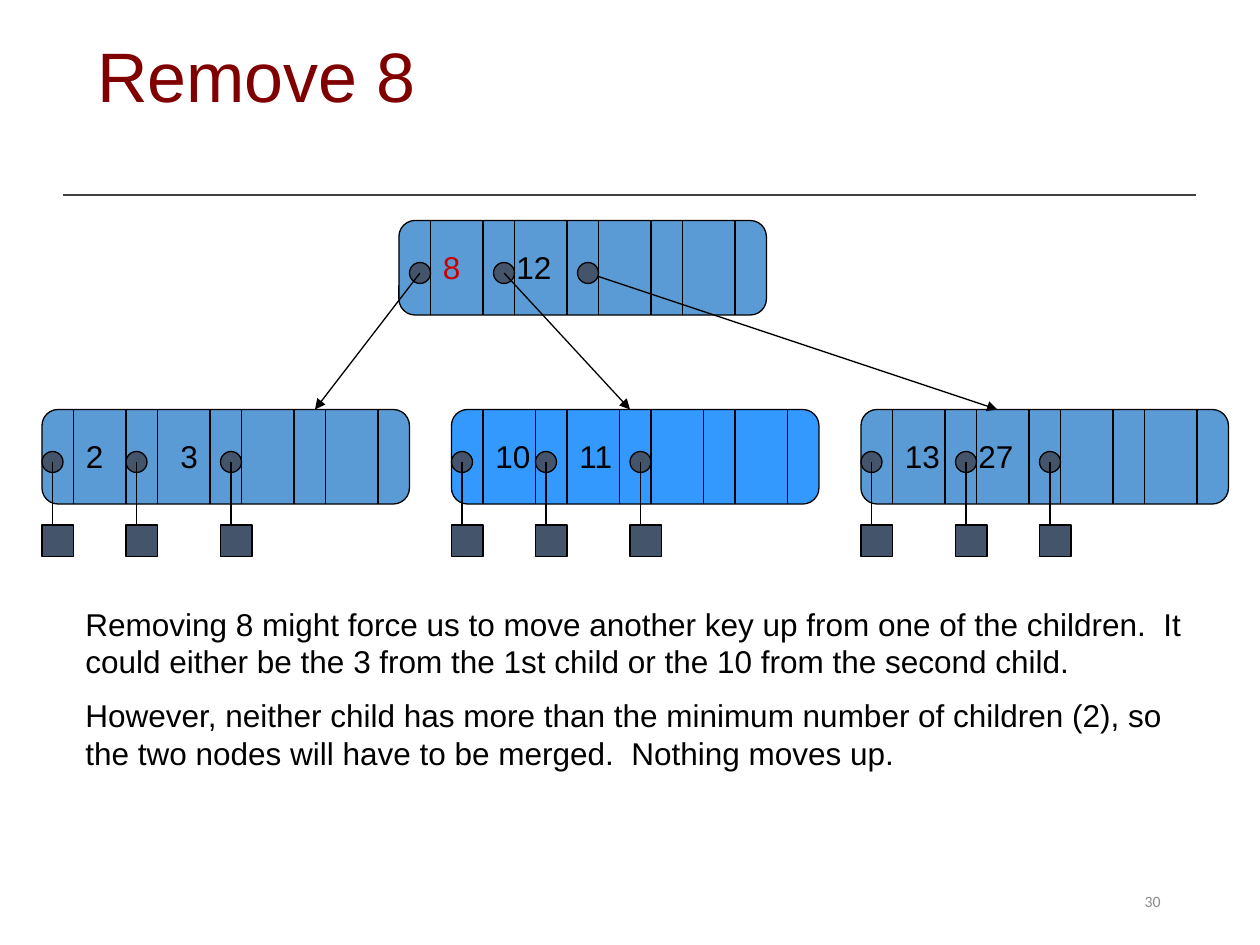
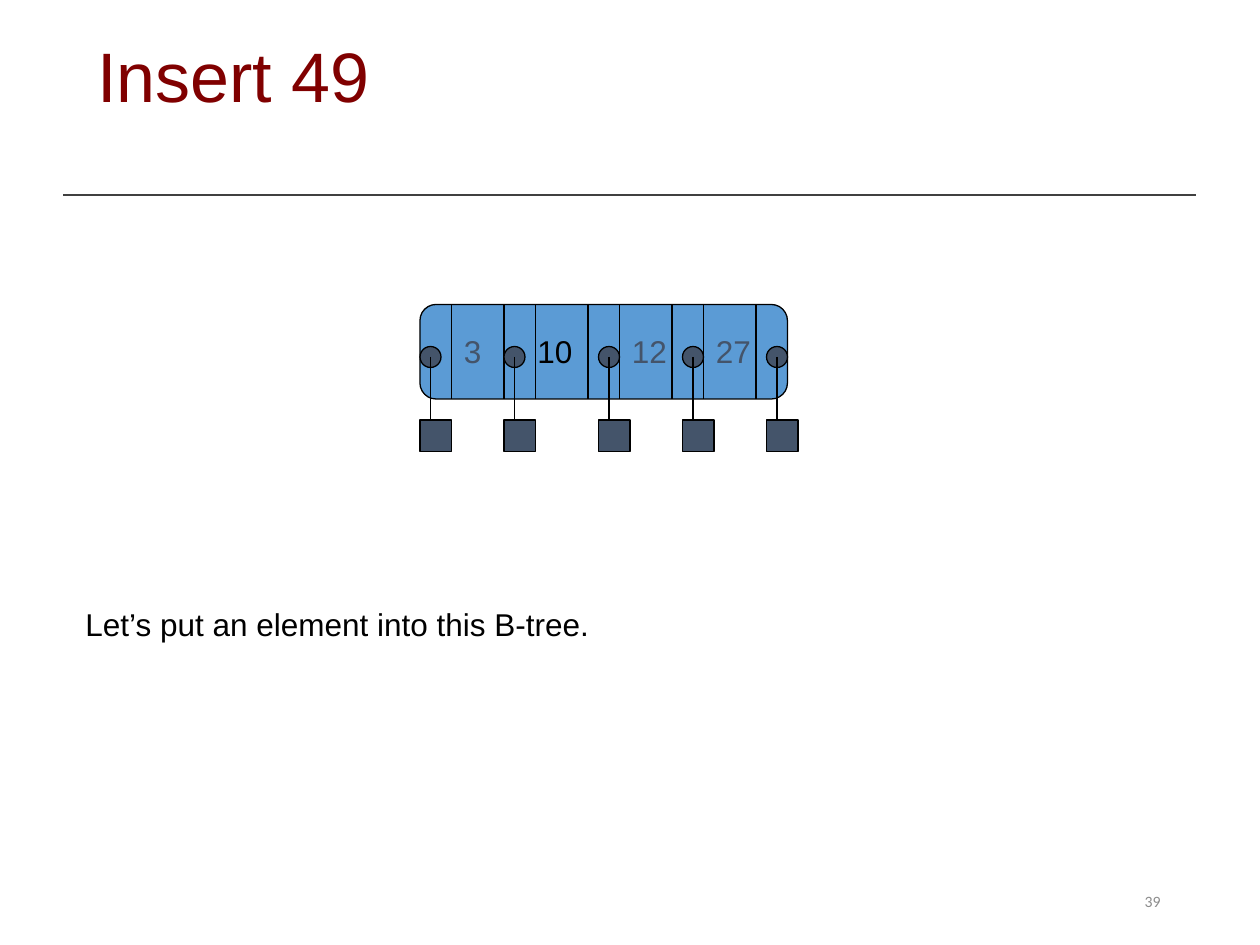
from lxml import etree
from pptx import Presentation
from pptx import util as u
from pptx.dml.color import RGBColor
from pptx.enum import shapes, text
from pptx.oxml.ns import qn

COLORS = {
    "title": "800000", "rule": "404040", "number": "8C8C8C", "ink": "000000",
    "node": "5B9BD5", "active": "3399FF", "pointer": "44546A", "removed": "CC0000",
}
# The trees lie on a grid of twelfths of an inch.
CELLS = 12
NODE_W, NODE_H = 35, 9
POINTER_W, KEY_W = 3, 5
DOT, LEAF = 2, 3
DOT_TOP, LEAF_TOP, LABEL_TOP = 4, 11, 2


def grid(n):
    return u.Inches(n / CELLS)


def rgb(name):
    return RGBColor.from_string(COLORS[name])


def style_paragraph(p, size, color, font="Arial"):
    for r in p.runs:
        r.font.name = font
        r.font.size = u.Pt(size)
        r.font.color.rgb = rgb(color)


def add_text(s, box, paragraphs, size, color, font="Arial", wrap=True):
    sp = s.shapes.add_textbox(*box)
    tf = sp.text_frame
    tf.word_wrap = wrap
    tf.text = "\n".join(paragraphs)
    for p in tf.paragraphs:
        style_paragraph(p, size, color, font)
    return tf


def add_line(s, start, end, color="ink", width=0.75, arrow=False):
    line = s.shapes.add_connector(shapes.MSO_CONNECTOR.STRAIGHT, *start, *end)
    line.line.color.rgb = rgb(color)
    line.line.width = u.Pt(width)
    if arrow:
        etree.SubElement(line.line._get_or_add_ln(), qn("a:tailEnd"), type="triangle")
    etree.SubElement(line._element.spPr, qn("a:effectLst"))


def grid_line(s, x1, y1, x2, y2, arrow=False):
    add_line(s, (grid(x1), grid(y1)), (grid(x2), grid(y2)), arrow=arrow)


def grid_shape(s, kind, x, y, w, h, fill):
    sp = s.shapes.add_shape(kind, grid(x), grid(y), grid(w), grid(h))
    sp.shadow.inherit = False
    sp.fill.solid()
    sp.fill.fore_color.rgb = rgb(fill)
    sp.line.color.rgb = rgb("ink")
    sp.line.width = u.Pt(0.75)
    return sp


def add_node(s, x, y, keys, fill="node"):
    """Draw a B-tree node; keys holds (value, offset, color)."""
    body = grid_shape(s, shapes.MSO_SHAPE.ROUNDED_RECTANGLE, x, y, NODE_W, NODE_H, fill)
    body.adjustments[0] = 0.17
    for slot in range(4):
        left = x + slot * (POINTER_W + KEY_W) + POINTER_W
        for divider in (left, left + KEY_W):
            grid_line(s, divider, y, divider, y + NODE_H)
    for value, offset, color in keys:
        width = 0.36 if len(value) == 1 else 0.51
        box = grid(x + offset), grid(y + LABEL_TOP), u.Inches(width), u.Inches(0.43)
        tf = add_text(s, box, [value], 18, color, wrap=False)
        tf.auto_size = text.MSO_AUTO_SIZE.SHAPE_TO_FIT_TEXT


def add_dot(s, x, y):
    grid_shape(s, shapes.MSO_SHAPE.OVAL, x, y + DOT_TOP, DOT, DOT, "pointer")


def add_leaves(s, x, y, offsets):
    """Hang an empty leaf from each pointer of the node at x, y."""
    for offset in offsets:
        left, middle = x + offset, x + offset + DOT / 2
        add_dot(s, left, y)
        grid_line(s, middle, y + DOT_TOP + DOT / 2, middle, y + LEAF_TOP + 2, arrow=True)
        grid_shape(s, shapes.MSO_SHAPE.RECTANGLE, left, y + LEAF_TOP, LEAF, LEAF, "pointer")


def add_branches(s, x, y, branches):
    """Point the node at x, y to its children; each branch is (offset, target x, target y)."""
    for i, (offset, target_x, target_y) in enumerate(branches):
        left = x + offset
        is_last = i == len(branches) - 1
        if not is_last:
            add_dot(s, left, y)
        grid_line(s, left + DOT / 2, y + DOT_TOP + DOT / 2, target_x, target_y, arrow=True)
        if is_last:  # the last dot covers the start of its arrow
            add_dot(s, left, y)


def add_notes_text(s, width, height, paragraphs):
    box = [u.Inches(n) for n in (0.58, 4.75, width, height)]
    tf = add_text(s, box, paragraphs, 18, "ink")
    tf.auto_size = text.MSO_AUTO_SIZE.SHAPE_TO_FIT_TEXT
    for p in tf.paragraphs[1:]:
        p.space_before = u.Pt(9)


def add_frame(prs, title, number):
    """Add a slide with its title, rule and slide number."""
    s = prs.slides.add_slide(prs.slide_layouts[5])
    add_line(s, (u.Inches(0.5), u.Inches(1.55)), (u.Inches(9.49), u.Inches(1.55)), "rule", 1)
    box = [u.Inches(n) for n in (7.06, 6.95, 2.25, 0.4)]
    tf = add_text(s, box, [number], 9, "number", "Calibri")
    tf.vertical_anchor = text.MSO_ANCHOR.MIDDLE
    tf.paragraphs[0].alignment = text.PP_ALIGN.RIGHT

    sp = s.shapes.title
    sp.left, sp.top, sp.width, sp.height = [u.Inches(n) for n in (0.67, 0.17, 8.5, 0.92)]
    tf = sp.text_frame
    tf.text = title
    tf.auto_size = text.MSO_AUTO_SIZE.NONE
    tf.vertical_anchor = text.MSO_ANCHOR.MIDDLE
    p = tf.paragraphs[0]
    p.alignment = text.PP_ALIGN.LEFT
    p.line_spacing = 0.9
    style_paragraph(p, 40, "title")
    return s


def remove_slide(prs):
    s = add_frame(prs, "Remove 8", "30")
    root_x, root_y, child_y = 38, 21, 39
    children = [
        (4, [("2", 3, "ink"), ("3", 12, "ink")], (0, 8, 17), "node"),
        (43, [("10", 3, "ink"), ("11", 11, "ink")], (0, 8, 17), "active"),
        (82, [("13", 3, "ink"), ("27", 10, "ink")], (0, 9, 17), "node"),
    ]
    add_node(s, root_x, root_y, [("8", 3, "removed"), ("12", 10, "ink")])
    for x, keys, offsets, fill in children:
        add_node(s, x, child_y, keys, fill)
        add_leaves(s, x, child_y, offsets)
    add_branches(s, root_x, root_y, [(1, 30, child_y), (9, 60, child_y), (17, 95, child_y)])
    add_notes_text(s, 8.92, 1.46, [
        "Removing 8 might force us to move another key up from one of the children.  "
        "It could either be the 3 from the 1st child or the 10 from the second child.",
        "However, neither child has more than the minimum number of children (2), "
        "so the two nodes will have to be merged.  Nothing moves up.",
    ])


def insert_slide(prs):
    s = add_frame(prs, "Insert 49", "39")
    x, y = 40, 29
    add_node(s, x, y, [("3", 3, "pointer"), ("10", 10, "ink"),
                       ("12", 19, "pointer"), ("27", 27, "pointer")])
    add_leaves(s, x, y, (0, 8, 17, 25, 33))
    add_notes_text(s, 9.08, 0.43, ["Let’s put an element into this B-tree."])


def main():
    prs = Presentation()
    prs.slide_width, prs.slide_height = u.Inches(10), u.Inches(7.5)
    remove_slide(prs)
    insert_slide(prs)
    prs.save("out.pptx")


if __name__ == "__main__":
    main()
